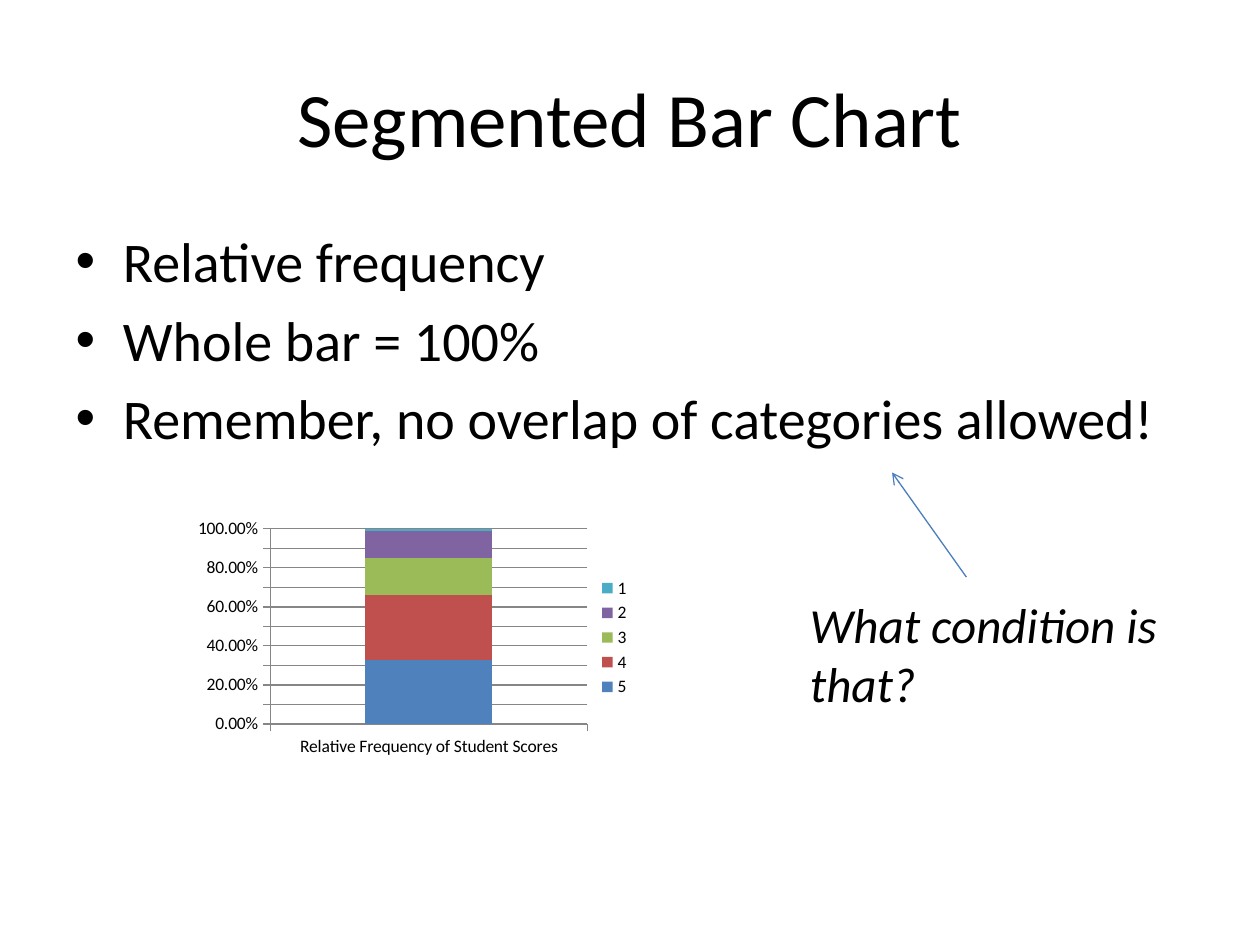
import pptx
import pptx.chart.data
import pptx.dml.color
import pptx.enum.chart
import pptx.enum.shapes
import pptx.enum.text
import pptx.oxml
import pptx.oxml.ns
import pptx.util
from pptx.dml.color import RGBColor
from pptx.util import Inches

BLACK = RGBColor(0x00, 0x00, 0x00)
GREY = RGBColor(0x86, 0x86, 0x86)
ARROW_BLUE = RGBColor(0x4B, 0x7E, 0xBC)
SCORES = [
    ("5", 0.33, RGBColor(0x4F, 0x81, 0xBD)),
    ("4", 0.33, RGBColor(0xC0, 0x50, 0x4D)),
    ("3", 0.19, RGBColor(0x9B, 0xBB, 0x59)),
    ("2", 0.14, RGBColor(0x80, 0x64, 0xA2)),
    ("1", 0.07, RGBColor(0x4B, 0xAC, 0xC6)),
]
BULLETS = [
    "Relative frequency",
    "Whole bar = 100%",
    "Remember, no overlap of categories allowed!",
]


def set_attrs(obj, values):
    """Set each named attribute of an object."""
    for name, value in values.items():
        setattr(obj, name, value)


def place(sp, left, top, width, height):
    """Move and size a shape, in inches."""
    set_attrs(sp, {"left": Inches(left), "top": Inches(top),
                   "width": Inches(width), "height": Inches(height)})


def format_font(font, size, italic=False):
    """Give a font the look of this slide."""
    set_attrs(font, {"name": "Calibri", "size": pptx.util.Pt(size), "italic": italic})
    font.color.rgb = BLACK


def fill_text(tf, lines, size, italic=False):
    """Write one paragraph for each line."""
    for i, line in enumerate(lines):
        p = tf.add_paragraph() if i else tf.paragraphs[0]
        r = p.add_run()
        r.text = line
        format_font(r.font, size, italic)


def add_note(s, text, left, top, width, height):
    """Add a wrapped italic text box."""
    sp = s.shapes.add_textbox(*map(Inches, (left, top, width, height)))
    set_attrs(sp.text_frame, {"word_wrap": True,
                              "auto_size": pptx.enum.text.MSO_AUTO_SIZE.SHAPE_TO_FIT_TEXT})
    fill_text(sp.text_frame, [text], 28, italic=True)


def add_arrow(s, x1, y1, x2, y2):
    """Add a thin line with an open arrowhead at its end."""
    cx = s.shapes.add_connector(pptx.enum.shapes.MSO_CONNECTOR.STRAIGHT,
                                *map(Inches, (x1, y1, x2, y2)))
    cx.line.color.rgb = ARROW_BLUE
    cx.line.width = pptx.util.Pt(0.75)
    qn = pptx.oxml.ns.qn
    head = cx.line._get_or_add_ln().makeelement(qn("a:tailEnd"), {"type": "arrow"})
    cx.line._get_or_add_ln().append(head)
    sp_pr = cx._element.spPr
    sp_pr.append(sp_pr.makeelement(qn("a:effectLst"), {}))


def add_score_chart(s, left, top, width, height):
    """Add the segmented bar of student scores."""
    enum = pptx.enum.chart
    data = pptx.chart.data.CategoryChartData()
    data.categories = ["Relative Frequency of Student Scores"]
    for name, value, _ in SCORES:
        data.add_series(name, [value])
    chart = s.shapes.add_chart(enum.XL_CHART_TYPE.COLUMN_STACKED,
                               *map(Inches, (left, top, width, height)), data).chart
    format_font(chart.font, 10)
    set_attrs(chart, {"has_title": False, "has_legend": True})
    set_attrs(chart.legend, {"position": enum.XL_LEGEND_POSITION.RIGHT,
                             "include_in_layout": False})
    plot = chart.plots[0]
    set_attrs(plot, {"gap_width": 150, "overlap": 100, "vary_by_categories": False})
    for series, (_, _, color) in zip(plot.series, SCORES):
        series.format.fill.solid()
        series.format.fill.fore_color.rgb = color
    axis = chart.value_axis
    set_attrs(axis, {"minimum_scale": 0, "maximum_scale": 1, "major_unit": 0.1,
                     "has_major_gridlines": True})
    set_attrs(axis.tick_labels, {"number_format": "0.00%", "number_format_is_linked": False})
    for ax in (axis, chart.category_axis):
        ax.major_tick_mark = enum.XL_TICK_MARK.OUTSIDE
        ax.format.line.color.rgb = GREY
    axis.major_gridlines.format.line.color.rgb = GREY


def main():
    """Build the slide and save it."""
    prs = pptx.Presentation()
    set_attrs(prs, {"slide_width": Inches(10), "slide_height": Inches(7.5)})
    s = prs.slides.add_slide(prs.slide_layouts[1])
    title, body = s.placeholders
    place(title, 0.5, 0.3, 9, 1.25)
    fill_text(title.text_frame, ["Segmented Bar Chart"], 44)
    place(body, 0.5, 1.75, 9, 4.95)
    fill_text(body.text_frame, BULLETS, 32)
    add_score_chart(s, 1.5, 4.08, 3.6, 1.96)
    add_arrow(s, 7.67, 4.58, 7.08, 3.75)
    add_note(s, "What condition is that?", 6.33, 4.67, 3, 1.04)
    prs.save("out.pptx")


if __name__ == "__main__":
    main()
